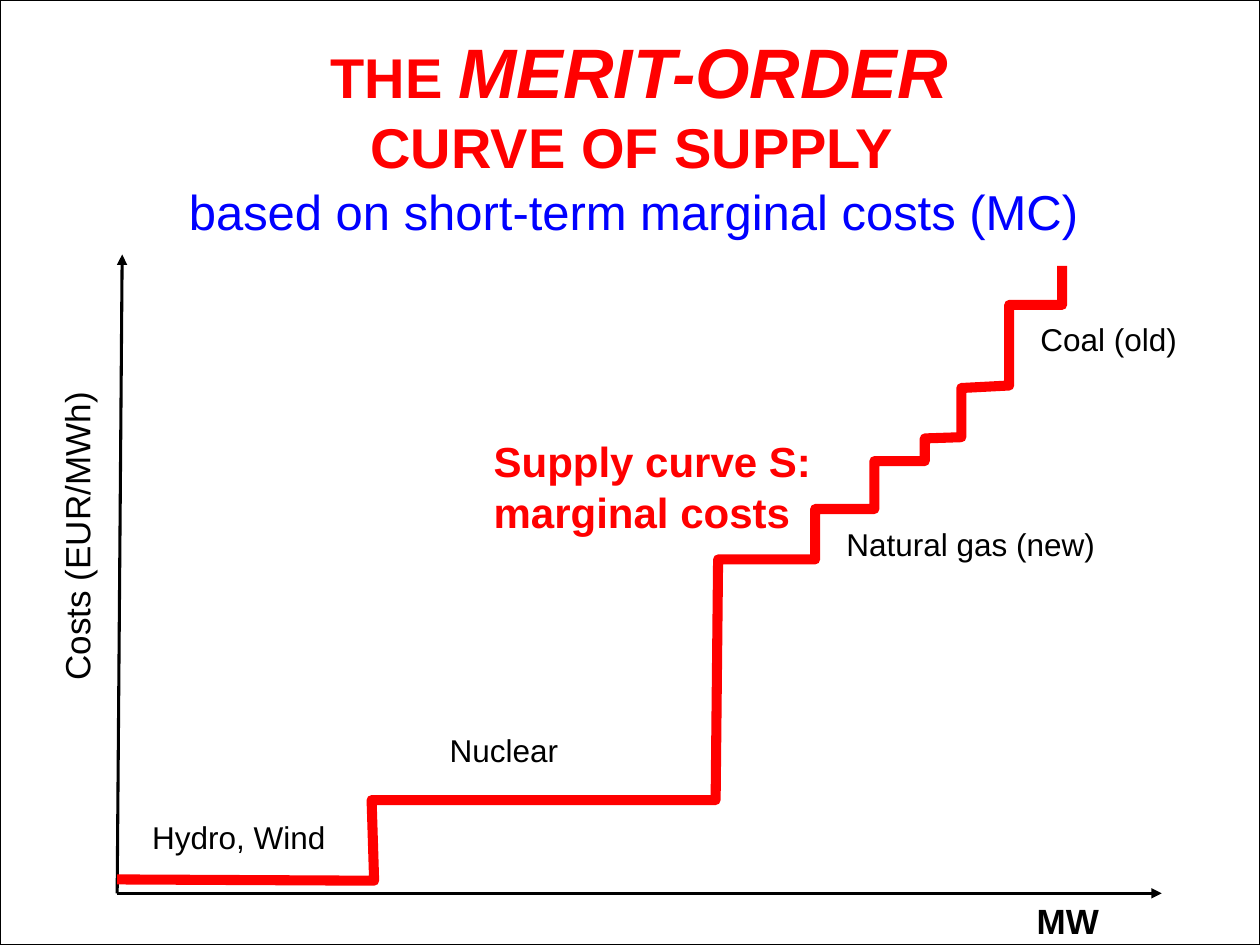
from lxml import etree
from pptx import Presentation
from pptx.dml.color import RGBColor
from pptx.enum.shapes import MSO_CONNECTOR, MSO_SHAPE
from pptx.enum.text import MSO_ANCHOR, MSO_AUTO_SIZE, PP_ALIGN
from pptx.oxml.ns import qn
from pptx.util import Inches, Pt

STRAIGHT = MSO_CONNECTOR.STRAIGHT
RECTANGLE = MSO_SHAPE.RECTANGLE
TOP, MIDDLE = MSO_ANCHOR.TOP, MSO_ANCHOR.MIDDLE
GROW, FIXED = MSO_AUTO_SIZE.SHAPE_TO_FIT_TEXT, MSO_AUTO_SIZE.NONE
LEFT, CENTER = PP_ALIGN.LEFT, PP_ALIGN.CENTER

BLACK, WHITE, RED, BLUE = "000000", "FFFFFF", "FF0000", "0000FF"
SLIDE_SIZE = (10, 7.5)

# Axes share one origin
ORIGIN = (0.93, 7.09)
AXIS_ENDS = [(9.22, 7.09), (0.97, 2.02)]

SUPPLY_CURVE = [
    (0.93, 6.98), (2.97, 6.99), (2.95, 6.35), (5.68, 6.35), (5.7, 4.44),
    (6.47, 4.44), (6.47, 4.04), (6.94, 4.04), (6.94, 3.66), (7.34, 3.66),
    (7.34, 3.48), (7.63, 3.47), (7.63, 3.08), (8.01, 3.06), (8.01, 2.42),
    (8.43, 2.42), (8.43, 2.11),
]

# Each title line is a list of (text, format) spans
TITLE = [
    [("THE ", {}), ("MERIT-ORDER", {"size": 40, "italic": True})],
    [("CURVE OF SUPPLY ", {})],
]

# Text, place, format
LABELS = [
    ("Costs (EUR/MWh)", (-1.01, 3.67, 3.23, 0.43),
     {"size": 20, "rotation": 270, "wrap": True}),
    ("MWh", (8.13, 7.09, 0.86, 0.43), {"size": 20, "bold": True}),
    ("Coal (old)", (8.16, 2.49, 1.44, 0.4), {}),
    ("Nuclear", (3.47, 5.75, 1.07, 0.4), {}),
    ("based on short-term marginal costs (MC)", (1.4, 1.39, 7.35, 0.57),
     {"size": 28, "color": BLUE}),
    ("Hydro, Wind", (1.11, 6.44, 1.59, 0.4), {}),
    ("Natural gas (new)", (6.62, 4.12, 2.26, 0.4), {}),
    ("Supply curve S:\nmarginal costs", (3.82, 3.41, 2.84, 0.91),
     {"size": 24, "color": RED, "bold": True}),
]


def rgb(color):
    return RGBColor.from_string(color)


def set_line(shape, color, width):
    shape.line.color.rgb = rgb(color)
    shape.line.width = Pt(width)
    return shape.line._get_or_add_ln()


def add_text(page, text, place, *, size=18, color=BLACK, bold=False,
             rotation=0, wrap=False, align=LEFT, anchor=TOP, fit=GROW,
             bottom=0.05):
    """Add a text box; text is a string or a list of lines of spans."""
    box = page.shapes.add_textbox(*map(Inches, place))
    box.rotation = rotation
    frame = box.text_frame
    frame.word_wrap = wrap
    frame.auto_size = fit
    frame.vertical_anchor = anchor
    frame.margin_bottom = Inches(bottom)
    para = frame.paragraphs[0]
    para.alignment = align
    if isinstance(text, str):
        text = [[(line, {})] for line in text.split("\n")]
    for number, line in enumerate(text):
        if number:
            para.add_line_break()
        for words, style in line:
            span = para.add_run()
            span.text = words
            span.font.name = "Arial"
            span.font.size = Pt(style.get("size", size))
            span.font.bold = bold
            span.font.italic = style.get("italic", False)
            span.font.color.rgb = rgb(color)


def add_axis(page, start, end):
    axis = page.shapes.add_connector(STRAIGHT, *map(Inches, start + end))
    line = set_line(axis, BLACK, 1.75)
    etree.SubElement(line, qn("a:tailEnd"), type="triangle")
    etree.SubElement(axis._element.spPr, qn("a:effectLst"))


def add_curve(page, points):
    start, *rest = [tuple(map(Inches, point)) for point in points]
    builder = page.shapes.build_freeform(*start)
    builder.add_line_segments(rest, close=False)
    curve = builder.convert_to_shape()
    curve.shadow.inherit = False
    curve.fill.background()
    etree.SubElement(set_line(curve, RED, 5.75), qn("a:round"))


def main():
    deck = Presentation()
    deck.slide_width, deck.slide_height = map(Inches, SLIDE_SIZE)
    page = deck.slides.add_slide(deck.slide_layouts[6])

    # Slide border
    border = page.shapes.add_shape(RECTANGLE, 0, 0, *map(Inches, SLIDE_SIZE))
    border.shadow.inherit = False
    border.fill.solid()
    border.fill.fore_color.rgb = rgb(WHITE)
    set_line(border, BLACK, 0.75)

    # Diagram
    for end in AXIS_ENDS:
        add_axis(page, ORIGIN, end)
    add_curve(page, SUPPLY_CURVE)

    # Title, raised by its bottom margin, and labels
    add_text(page, TITLE, (0.2, 0.63, 9.75, 0.92), size=32, color=RED,
             bold=True, wrap=True, align=CENTER, anchor=MIDDLE, fit=FIXED,
             bottom=0.57)
    for text, place, style in LABELS:
        add_text(page, text, place, **style)

    deck.save("out.pptx")


if __name__ == "__main__":
    main()
